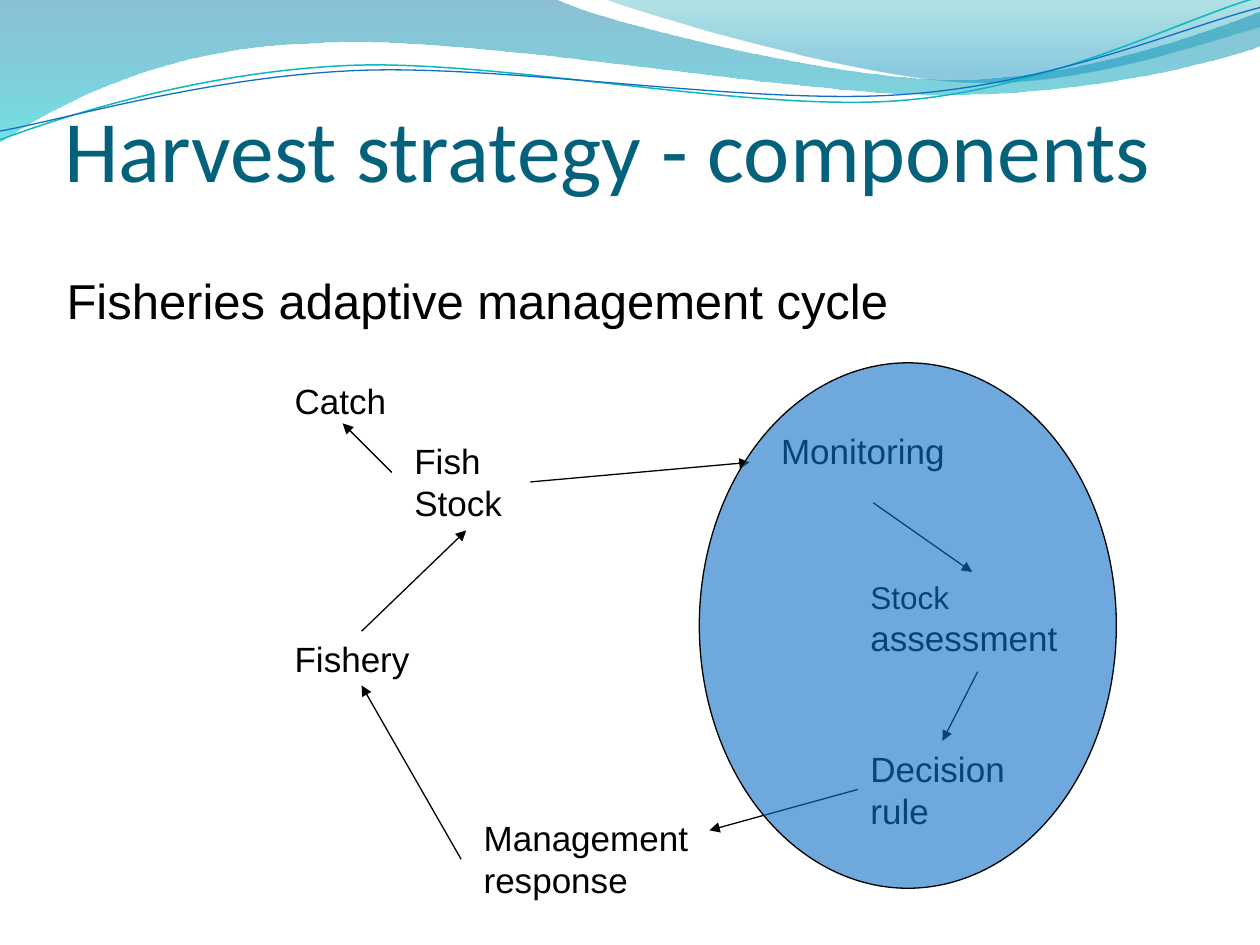
from pptx import Presentation
from pptx.dml.color import RGBColor
from pptx.enum.shapes import MSO_CONNECTOR, MSO_SHAPE
from pptx.enum.text import MSO_ANCHOR, MSO_AUTO_SIZE, PP_ALIGN
from pptx.oxml.ns import qn
from pptx.util import Inches, Pt
from lxml.etree import SubElement


def rgb(code):
    return RGBColor.from_string(code)


def fade(fill, alphas):
    """Set the opacity in percent of each colour of a fill."""
    for node, alpha in zip(fill.iter(qn("a:srgbClr")), alphas):
        SubElement(node, qn("a:alpha")).set("val", str(alpha * 1000))


deck = Presentation()
deck.slide_width, deck.slide_height = Inches(10), Inches(7.5)
slide = deck.slides.add_slide(deck.slide_layouts[5])
shapes = slide.shapes

# Waves: start point, then steps of 1 point (straight) or 3 points (curve);
# then gradient stops (position, colour, opacity) or a line (colour, width)
waves = [
    ((0, 0), [[(4.4, -0.01)],
              [(4.76, 0.17), (6.64, 0.63), (7.58, 0.63)],
              [(8.53, 0.63), (9.58, 0.26), (10, 0.09)],
              [(10.01, 0.36)],
              [(9.83, 0.44), (8.7, 0.76), (7.46, 0.75)],
              [(6.22, 0.75), (3.82, 0.28), (2.57, 0.34)],
              [(1.29, 0.36), (0.46, 0.83), (-0.01, 1.13)],
              [(0, 0)]],
     [(0, "0074A1", 45), (1, "00C6CF", 55)], None),
    ((4.79, -0.01), [[(5.09, 0.11), (6.82, 0.62), (7.69, 0.65)],
                     [(8.56, 0.69), (9.61, 0.32), (10, 0.21)],
                     [(10, 0)],
                     [(4.79, -0.01)]],
     [(0, "00A1A9", 30), (0.8, "008BBF", 45)], None),
    ((0, 1.11), [[(0.48, 0.93), (1.58, 0.57), (2.77, 0.52)],
                 [(3.95, 0.47), (5.93, 0.89), (7.13, 0.8)],
                 [(8.33, 0.71), (9.38, 0.15), (9.98, -0.02)]],
     None, ("0AB8BF", 0.85)),
    ((0, 1.04), [[(0.47, 0.96), (1.64, 0.61), (2.83, 0.56)],
                 [(4.03, 0.51), (5.97, 0.84), (7.17, 0.75)],
                 [(8.36, 0.67), (9.41, 0.21), (10, 0.06)]],
     None, ("0F6FC6", 0.75)),
]
for start, steps, stops, line in waves:
    pen = shapes.build_freeform(*map(Inches, start))
    dots = [tuple(map(Inches, dot)) for step in steps for dot in step]
    pen.add_line_segments(dots, close=bool(stops))
    wave = pen.convert_to_shape()
    wave.shadow.inherit = False
    # Turn each run of three segments into one curve
    parts = iter(list(wave._element.iter(qn("a:lnTo"))))
    for step in steps:
        nodes = [next(parts) for _ in step]
        if len(nodes) == 3:
            curve = SubElement(nodes[0].getparent(), qn("a:cubicBezTo"))
            nodes[0].addprevious(curve)
            for node in nodes:
                curve.append(node[0])
                node.getparent().remove(node)
    if stops:
        wave.line.fill.background()
        wave.fill.gradient()
        wave.fill.gradient_angle = 270
        for stop, (spot, code, _) in zip(wave.fill.gradient_stops, stops):
            stop.position = spot
            stop.color.rgb = rgb(code)
        fade(wave._element.spPr.find(qn("a:gradFill")), [s[2] for s in stops])
    else:
        wave.fill.background()
        wave.line.color.rgb = rgb(line[0])
        wave.line.width = Pt(line[1])

# Title, in front of the waves
title = shapes.title
shapes._spTree.append(title._element)
place = {"left": 0.51, "top": 0.52, "width": 9, "height": 1.25}
for name, value in place.items():
    setattr(title, name, Inches(value))
frame = title.text_frame
frame.text = "Harvest strategy - components"
format = {"margin_left": 0, "margin_right": 0, "margin_top": Inches(0.05),
          "margin_bottom": 0, "vertical_anchor": MSO_ANCHOR.MIDDLE,
          "word_wrap": True, "auto_size": MSO_AUTO_SIZE.NONE}
for name, value in format.items():
    setattr(frame, name, value)
para = frame.paragraphs[0]
para.alignment = PP_ALIGN.LEFT
font = para.runs[0].font
for name, value in {"name": "Calibri", "size": Pt(50)}.items():
    setattr(font, name, value)
font.color.rgb = rgb("04617B")

# Labels: place, then runs of text and size
labels = {
    "catch": ((2.24, 2.96, 0.93, 0.43), [("Catch", 20)]),
    "fish": ((3.19, 3.44, 1.02, 0.77), [("Fish Stock", 20)]),
    "monitor": ((6.1, 3.36, 1.65, 0.43), [("Monitoring", 20)]),
    "assess": ((6.81, 4.54, 1.81, 0.73), [("Stock ", 18), ("assessment", 20)]),
    "manage": ((3.74, 6.43, 1.97, 0.77), [("Management response", 20)]),
    "rule": ((6.81, 5.88, 1.34, 0.77), [("Decision", 20), (" ", 18), ("rule", 20)]),
    "fishery": ((2.24, 5.01, 1.26, 0.43), [("Fishery", 20)]),
    "cycle": ((0.43, 2.1, 7.32, 0.57), [("Fisheries adaptive management cycle", 28)]),
}
boxes = {}
for key, (area, runs) in labels.items():
    box = boxes[key] = shapes.add_textbox(*map(Inches, area))
    box.text_frame.word_wrap = key != "catch"
    box.text_frame.auto_size = MSO_AUTO_SIZE.SHAPE_TO_FIT_TEXT
    for text, size in runs:
        run = box.text_frame.paragraphs[0].add_run()
        run.text = text
        for name, value in {"name": "Arial", "size": Pt(size)}.items():
            setattr(run.font, name, value)
        run.font.color.rgb = rgb("000000")

# Arrows: ends, then the label and side joined at each end
arrows = [
    ((6.93, 3.99, 7.72, 4.54), None, ("assess", 0)),
    ((2.88, 5.01, 3.7, 4.2), ("fishery", 0), ("fish", 2)),
    ((7.76, 5.33, 7.48, 5.88), None, ("rule", 0)),
    ((6.81, 6.26, 5.63, 6.59), ("rule", 1), None),
    ((3.11, 3.75, 2.72, 3.36), None, None),
    ((4.21, 3.82, 5.95, 3.67), ("fish", 3), None),
    ((3.66, 6.82, 2.88, 5.44), None, ("fishery", 2)),
]
for ends, begin, end in arrows:
    arrow = shapes.add_connector(MSO_CONNECTOR.STRAIGHT, *map(Inches, ends))
    if begin:
        arrow.begin_connect(boxes[begin[0]], begin[1])
    if end:
        arrow.end_connect(boxes[end[0]], end[1])
    arrow.line.color.rgb = rgb("000000")
    arrow.line.width = Pt(0.75)
    SubElement(arrow.line._get_or_add_ln(), qn("a:tailEnd")).set("type", "triangle")
    SubElement(arrow._element.spPr, qn("a:effectLst"))

# Translucent ellipse over the strategy parts
oval = shapes.add_shape(MSO_SHAPE.OVAL, *map(Inches, (5.55, 2.88, 3.31, 4.17)))
oval.shadow.inherit = False
oval.fill.solid()
oval.fill.fore_color.rgb = rgb("0F6FC6")
fade(oval._element.spPr.find(qn("a:solidFill")), [60])
oval.line.color.rgb = rgb("000000")
oval.line.width = Pt(0.75)

deck.save("out.pptx")
